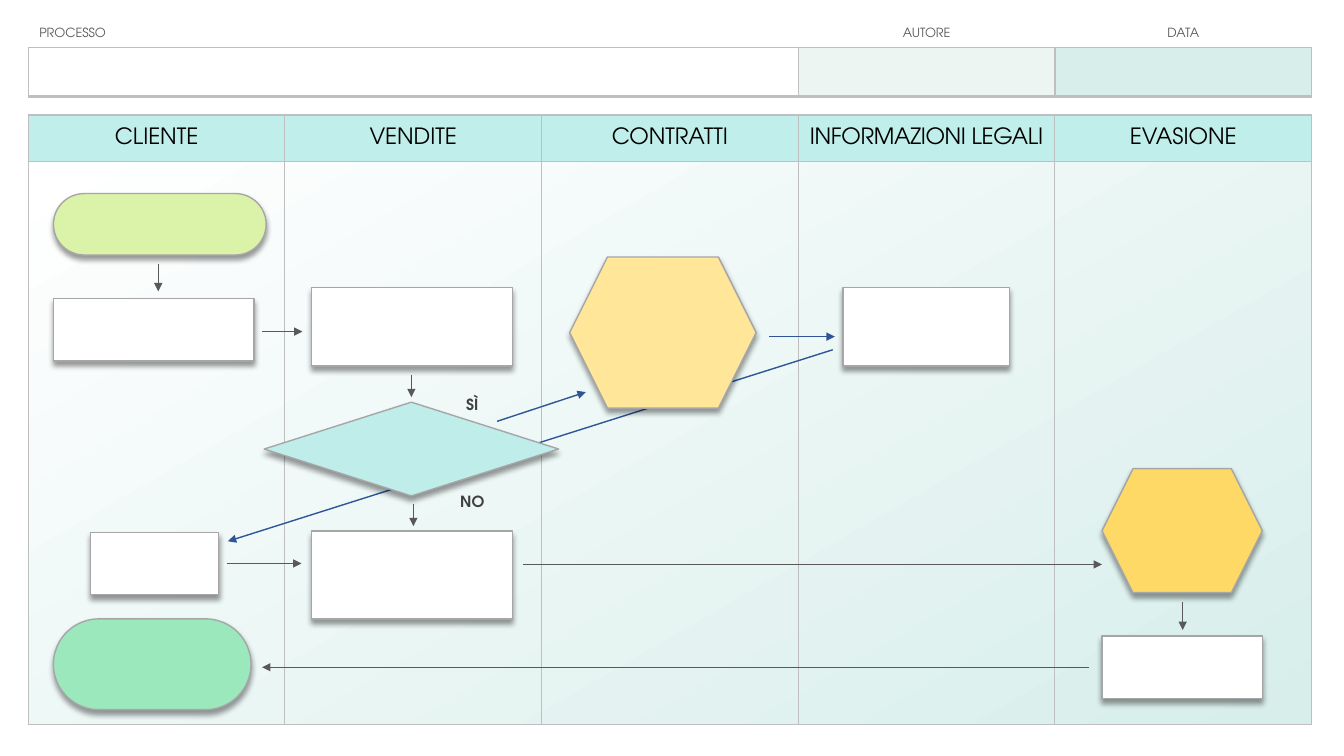
import lxml.etree
import pptx
import pptx.dml.color
import pptx.enum.shapes
import pptx.enum.text
import pptx.oxml.ns
import pptx.util

Inches = pptx.util.Inches
Pt = pptx.util.Pt
RGBColor = pptx.dml.color.RGBColor
Shape = pptx.enum.shapes.MSO_SHAPE
Align = pptx.enum.text.PP_ALIGN
Anchor = pptx.enum.text.MSO_ANCHOR
qn = pptx.oxml.ns.qn

FONT = "TeX Gyre Adventor"
BLACK = RGBColor(0x00, 0x00, 0x00)
WHITE = RGBColor(0xFF, 0xFF, 0xFF)
INK = RGBColor(0x40, 0x40, 0x40)
GREY = RGBColor(0x59, 0x59, 0x59)
OUTLINE = RGBColor(0xA6, 0xA6, 0xA6)
BORDER = RGBColor(0xBF, 0xBF, 0xBF)
BLUE = RGBColor(0x2F, 0x55, 0x97)
LANE_HEAD = RGBColor(0xBF, 0xEE, 0xEB)
TEAL = RGBColor(0xBF, 0xEE, 0xEA)
MIST = RGBColor(0xD7, 0xEE, 0xEB)
PALE = RGBColor(0xED, 0xF5, 0xF3)
LIME = RGBColor(0xDB, 0xF2, 0xA9)
MINT = RGBColor(0x9C, 0xE8, 0xBD)
CREAM = RGBColor(0xFF, 0xE6, 0x99)
GOLD = RGBColor(0xFF, 0xD9, 0x66)

LEFT, WIDTH = 0.28, 12.73
LANES = ["CLIENTE", "VENDITE", "CONTRATTI", "INFORMAZIONI LEGALI", "EVASIONE"]
LANE = WIDTH / len(LANES)

# kind, fill, left, top, width, height
STEPS = [
    (Shape.ROUNDED_RECTANGLE, LIME, 0.53, 1.92, 2.11, 0.61),
    (Shape.FLOWCHART_PROCESS, WHITE, 0.53, 2.96, 1.99, 0.62),
    (Shape.FLOWCHART_DECISION, TEAL, 2.62, 3.99, 2.92, 0.93),
    (Shape.ROUNDED_RECTANGLE, MINT, 0.53, 6.14, 1.96, 0.9),
    (Shape.FLOWCHART_PROCESS, WHITE, 3.09, 2.85, 1.99, 0.78),
    (Shape.FLOWCHART_PROCESS, WHITE, 8.36, 2.85, 1.65, 0.78),
    (Shape.FLOWCHART_PROCESS, WHITE, 3.09, 5.27, 1.99, 0.87),
    (Shape.HEXAGON, GOLD, 10.93, 4.65, 1.59, 1.23),
    (Shape.FLOWCHART_PROCESS, WHITE, 10.93, 6.31, 1.59, 0.62),
    (Shape.FLOWCHART_PROCESS, WHITE, 0.9, 5.28, 1.27, 0.62),
    (Shape.HEXAGON, CREAM, 5.65, 2.55, 1.85, 1.5),
]

# colour, start x, start y, end x, end y
RETURN_ARROW = (BLUE, 8.26, 3.47, 2.26, 5.37)
ARROWS = [
    (GREY, 1.57, 2.62, 1.57, 2.89),
    (BLUE, 4.93, 4.18, 5.81, 3.89),
    (GREY, 4.08, 3.72, 4.08, 3.94),
    (GREY, 2.6, 3.29, 3, 3.29),
    (BLUE, 7.63, 3.34, 8.28, 3.34),
    (GREY, 4.1, 5, 4.1, 5.22),
    (GREY, 5.19, 5.6, 10.93, 5.6),
    (GREY, 11.73, 5.97, 11.73, 6.25),
    (GREY, 10.8, 6.62, 2.6, 6.62),
    (GREY, 2.25, 5.59, 2.99, 5.59),
]


def add_child(parent, tag, **attributes):
    return lxml.etree.SubElement(parent, qn(tag), attributes)


class Flowchart:
    """Draws the parts of a swimlane chart on one slide."""

    def __init__(self, page):
        self.shapes = page.shapes

    def backdrop(self, left, top, width, height):
        box = self.shapes.add_shape(Shape.RECTANGLE, Inches(left), Inches(top),
                                    Inches(width), Inches(height))
        box.shadow.inherit = False
        box.line.fill.background()
        box.fill.gradient()
        box.fill.gradient_angle = 300
        for stop, position, color in zip(box.fill.gradient_stops, (0, 1), (WHITE, MIST)):
            stop.position = position
            stop.color.rgb = color

    def grid(self, left, top, columns, rows):
        """Add a plain table and return it, without banding."""
        frame = self.shapes.add_table(len(rows), len(columns), Inches(left), Inches(top),
                                      Inches(sum(columns)), Inches(sum(rows)))
        table = frame.table
        table.first_row = table.horz_banding = False
        for column, width in zip(table.columns, columns):
            column.width = Inches(width)
        for row, height in zip(table.rows, rows):
            row.height = Inches(height)
        return table

    def cell(self, cell, borders, fill=None):
        """Set borders as points for left, right, top and bottom, 0 for none."""
        properties = cell._tc.get_or_add_tcPr()
        for side, points in zip("LRTB", borders):
            line = add_child(properties, "a:ln" + side, w=str(Pt(points)))
            if points:
                solid = add_child(line, "a:solidFill")
                add_child(solid, "a:srgbClr", val=str(BORDER))
            else:
                add_child(line, "a:noFill")
        if fill is None:
            cell.fill.background()
        else:
            cell.fill.solid()
            cell.fill.fore_color.rgb = fill

    def cell_text(self, cell, text, size, color, align=Align.CENTER, indent=0.01):
        cell.vertical_anchor = Anchor.MIDDLE
        cell.margin_left = Inches(indent)
        cell.margin_right = cell.margin_top = Inches(0.01)
        cell.margin_bottom = 0
        return self.add_text(cell.text_frame, text, size, color, align)

    def add_text(self, text_frame, text, size, color, align=Align.CENTER, bold=False):
        para = text_frame.paragraphs[0]
        para.alignment = align
        span = para.add_run()
        span.text = text
        span.font.name = FONT
        span.font.size = Pt(size)
        span.font.bold = bold
        span.font.color.rgb = color
        return span

    def step(self, kind, fill, left, top, width, height):
        box = self.shapes.add_shape(kind, Inches(left), Inches(top),
                                    Inches(width), Inches(height))
        if kind == Shape.ROUNDED_RECTANGLE:
            box.adjustments[0] = 0.5
        box.fill.solid()
        box.fill.fore_color.rgb = fill
        box.line.color.rgb = OUTLINE
        box.line.width = Pt(1)
        box.shadow.inherit = False
        effects = box._element.spPr.find(qn("a:effectLst"))
        shadow = add_child(effects, "a:outerShdw", blurRad=str(Pt(4)), dist=str(Pt(3)),
                           dir="5400000", algn="t", rotWithShape="0")
        add_child(add_child(shadow, "a:srgbClr", val=str(BLACK)), "a:alpha", val="40000")

    def arrow(self, color, x1, y1, x2, y2):
        line = self.shapes.add_connector(pptx.enum.shapes.MSO_CONNECTOR.STRAIGHT,
                                         Inches(x1), Inches(y1), Inches(x2), Inches(y2))
        line.line.color.rgb = color
        line.line.width = Pt(1)
        properties = line._element.spPr
        add_child(properties.find(qn("a:ln")), "a:tailEnd", type="triangle")
        add_child(properties, "a:effectLst")

    def label(self, text, left, top, width, height):
        box = self.shapes.add_textbox(Inches(left), Inches(top), Inches(width), Inches(height))
        frame = box.text_frame
        frame.word_wrap = True
        frame.vertical_anchor = Anchor.MIDDLE
        frame.margin_left = frame.margin_right = Inches(0.02)
        frame.margin_top = frame.margin_bottom = Inches(0.02)
        self.add_text(frame, text, 11, INK, bold=True)


def main():
    deck = pptx.Presentation()
    deck.slide_width, deck.slide_height = Inches(13.33), Inches(7.5)
    chart = Flowchart(deck.slides.add_slide(deck.slide_layouts[6]))

    chart.backdrop(LEFT, 1.6, WIDTH, 5.58)
    lanes = chart.grid(LEFT, 1.14, [LANE] * len(LANES), [0.46, 5.59])
    for index, name in enumerate(LANES):
        chart.cell(lanes.cell(0, index), (1, 1, 1, 1), LANE_HEAD)
        chart.cell(lanes.cell(1, index), (1, 1, 1, 1))
        span = chart.cell_text(lanes.cell(0, index), name, 16, BLACK)
        if name == "INFORMAZIONI LEGALI":
            span.font._element.set("spc", "-20")

    header = chart.grid(LEFT, 0.19, [3 * LANE, LANE, LANE], [0.28, 0.49])
    fields = [("PROCESSO", WHITE, Align.LEFT, 0.11),
              ("AUTORE", PALE, Align.CENTER, 0.01),
              ("DATA", MIST, Align.CENTER, 0.01)]
    for index, (name, fill, align, indent) in enumerate(fields):
        chart.cell(header.cell(0, index), (0, 0, 0, 1))
        chart.cell(header.cell(1, index), (1, 1, 1, 2.25), fill)
        chart.cell_text(header.cell(0, index), name, 9, GREY, align, indent)

    chart.arrow(*RETURN_ARROW)
    for step in STEPS:
        chart.step(*step)
    for arrow in ARROWS:
        chart.arrow(*arrow)
    chart.label("NO", 4.3, 4.82, 0.77, 0.31)
    chart.label("SÌ", 4.32, 3.86, 0.73, 0.31)
    deck.save("out.pptx")


if __name__ == "__main__":
    main()
